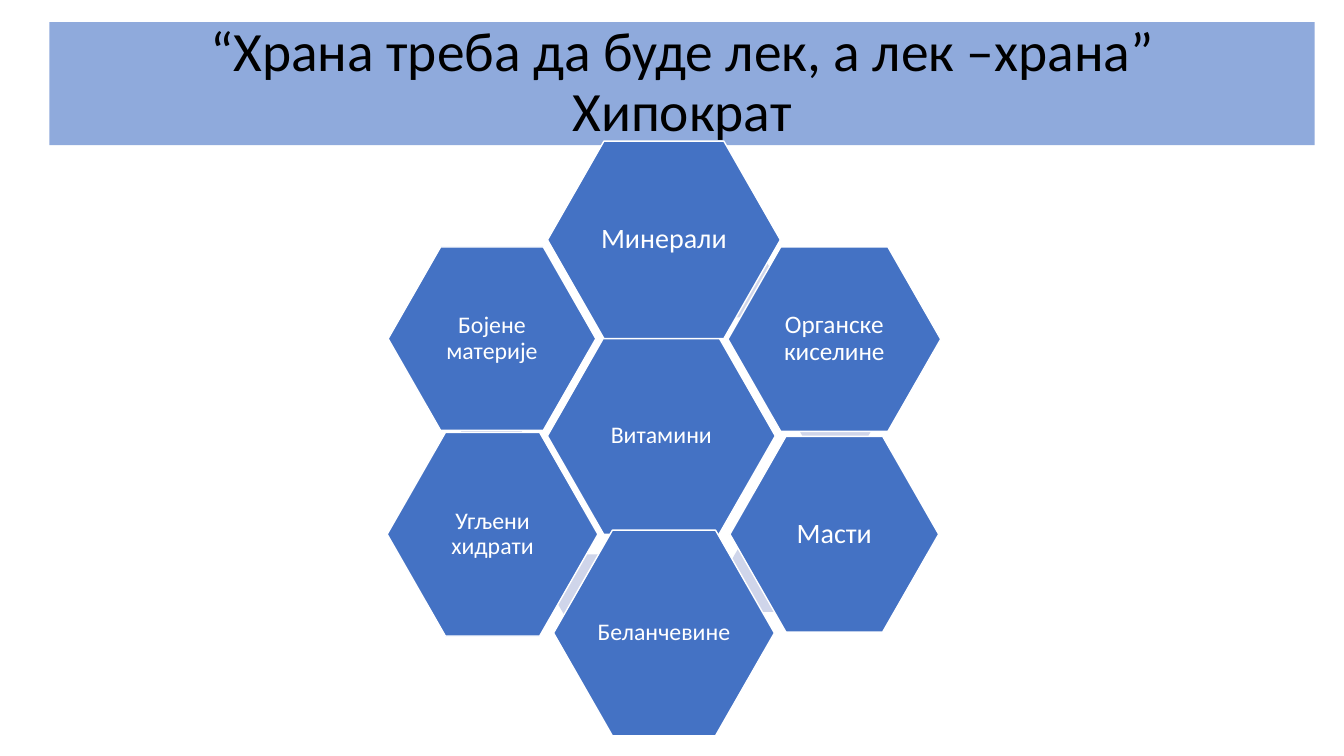
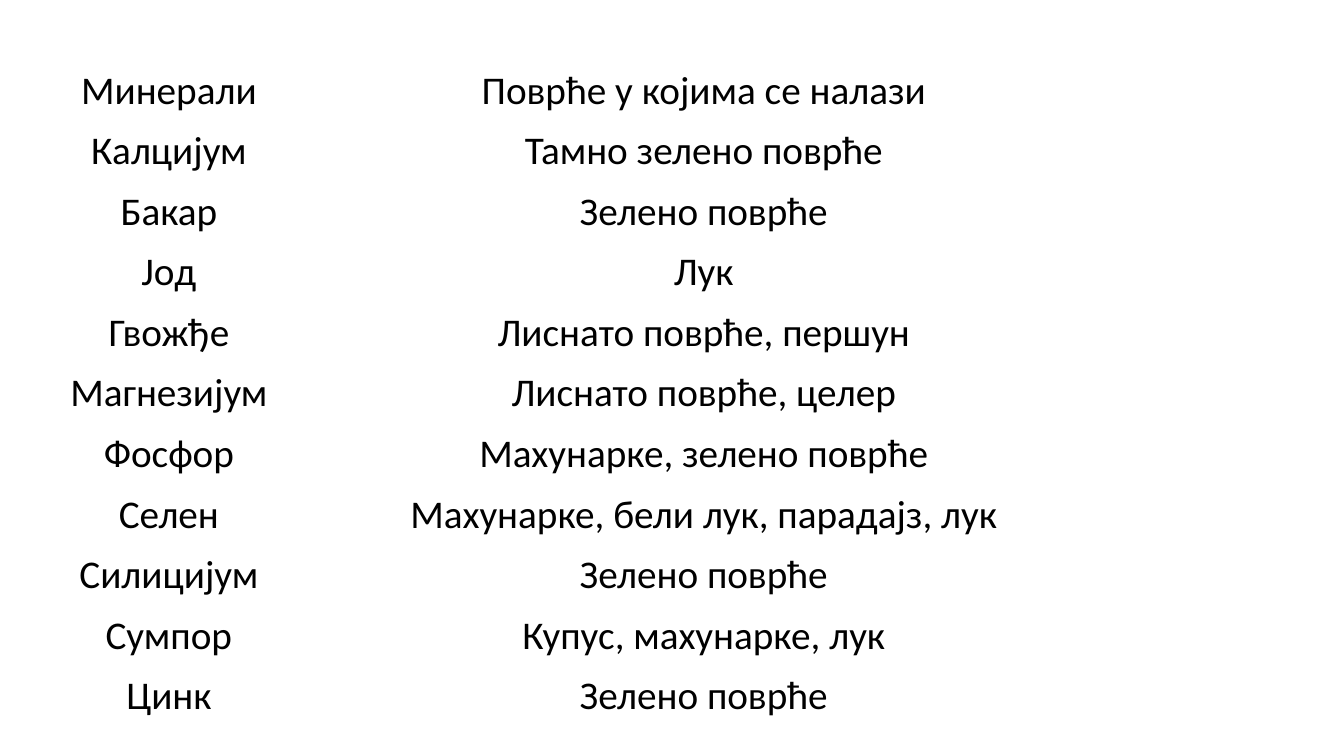
"""Build two slides: food nutrients as a hexagon cluster and a table of minerals."""
from pptx import Presentation
from pptx.dml.color import RGBColor
from pptx.enum.shapes import MSO_SHAPE
from pptx.enum.text import MSO_ANCHOR, MSO_AUTO_SIZE, PP_ALIGN
from pptx.util import Inches, Pt

FONT = "Calibri"
BLACK, WHITE = "000000", "FFFFFF"
BAND, BLUE, PALE = "8FAADC", "4472C4", "CFD5EA"
TITLE_ONLY, BLANK = 5, 6

TITLE = "“Храна треба да буде лек, а лек –храна”\vХипократ"

ACCENT_SIZE = (0.85, 0.73)
NUTRIENTS = [
    ("Витамини", 17, (5.43, 3.35, 2.26, 1.95), (6.86, 2.42)),
    ("Минерали", 20, (5.43, 1.4, 2.31, 1.96), (7.86, 3.79)),
    ("Органске киселине", 18, (7.22, 2.45, 2.11, 1.83), (7.17, 5.34)),
    ("Масти", 20, (7.24, 4.33, 2.07, 1.94), (5.46, 5.5)),
    ("Беланчевине", 17, (5.49, 5.26, 2.19, 2.04), (4.45, 4.13)),
    ("Угљени хидрати", 17, (3.84, 4.29, 2.09, 2.02), None),
    ("Бојене материје", 17, (3.85, 2.45, 2.06, 1.82), None),
]

MINERALS = [
    ("Минерали", "Поврће у којима се налази"),
    ("Калцијум", "Тамно зелено поврће"),
    ("Бакар", "Зелено поврће"),
    ("Joд", "Лук"),
    ("Гвожђе", "Лиснато поврће, першун"),
    ("Maгнезијум", "Лиснато поврће, целер"),
    ("Фосфор", "Махунарке, зелено поврће"),
    ("Селен", "Махунарке, бели лук, парадајз, лук"),
    ("Силицијум", "Зелено поврће"),
    ("Сумпор", "Купус, махунарке, лук"),
    ("Цинк", "Зелено поврће"),
]
COLUMN_WIDTHS = (2.47, 8.14)
TABLE_HEIGHT = 6.61


def paint(target, color):
    target.fill.solid()
    target.fill.fore_color.rgb = RGBColor.from_string(color)


def write(frame, text, size, color, spacing=None):
    frame.text = text
    paragraph = frame.paragraphs[0]
    paragraph.alignment = PP_ALIGN.CENTER
    paragraph.line_spacing = spacing
    font = paragraph.font
    font.name, font.size, font.bold = FONT, Pt(size), False
    font.color.rgb = RGBColor.from_string(color)


def set_margins(target, margin):
    target.margin_left = target.margin_right = Inches(margin)
    target.margin_top = target.margin_bottom = Inches(margin)


def add_hexagon(page, place, color, adjustment):
    hexagon = page.shapes.add_shape(MSO_SHAPE.HEXAGON, *map(Inches, place))
    hexagon.adjustments[0] = adjustment
    hexagon.shadow.inherit = False
    paint(hexagon, color)
    hexagon.line.fill.background()
    return hexagon


def add_nutrient(page, name, size, place, accent):
    hexagon = add_hexagon(page, place, BLUE, 0.286)
    hexagon.line.color.rgb = RGBColor.from_string(WHITE)
    hexagon.line.width = Pt(1)
    frame = hexagon.text_frame
    frame.word_wrap = True
    frame.vertical_anchor = MSO_ANCHOR.MIDDLE
    set_margins(frame, 0.02)
    write(frame, name, size, WHITE, 0.9)
    if accent:
        add_hexagon(page, accent + ACCENT_SIZE, PALE, 0.289)


def build_nutrients(deck):
    page = deck.slides.add_slide(deck.slide_layouts[TITLE_ONLY])
    title = page.shapes.title
    title.left, title.top = Inches(0.49), Inches(0.22)
    title.width, title.height = Inches(12.55), Inches(1.22)
    paint(title, BAND)
    frame = title.text_frame
    frame.auto_size = MSO_AUTO_SIZE.NONE
    frame.vertical_anchor = MSO_ANCHOR.MIDDLE
    write(frame, TITLE, 39.6, BLACK, 0.9)
    for nutrient in NUTRIENTS:
        add_nutrient(page, *nutrient)


def build_minerals(deck):
    page = deck.slides.add_slide(deck.slide_layouts[BLANK])
    table = page.shapes.add_table(
        len(MINERALS), len(COLUMN_WIDTHS), Inches(0.44), Inches(0.6),
        Inches(sum(COLUMN_WIDTHS)), Inches(TABLE_HEIGHT)).table
    table.first_row = table.horz_banding = False
    for column, width in zip(table.columns, COLUMN_WIDTHS):
        column.width = Inches(width)
    for row, texts in zip(table.rows, MINERALS):
        for cell, text in zip(row.cells, texts):
            cell.fill.background()
            cell.vertical_anchor = MSO_ANCHOR.MIDDLE
            set_margins(cell, 0)
            write(cell.text_frame, text, 28, BLACK)


def main():
    deck = Presentation()
    deck.slide_width, deck.slide_height = Inches(13.33), Inches(7.5)
    build_nutrients(deck)
    build_minerals(deck)
    deck.save("out.pptx")


if __name__ == "__main__":
    main()
